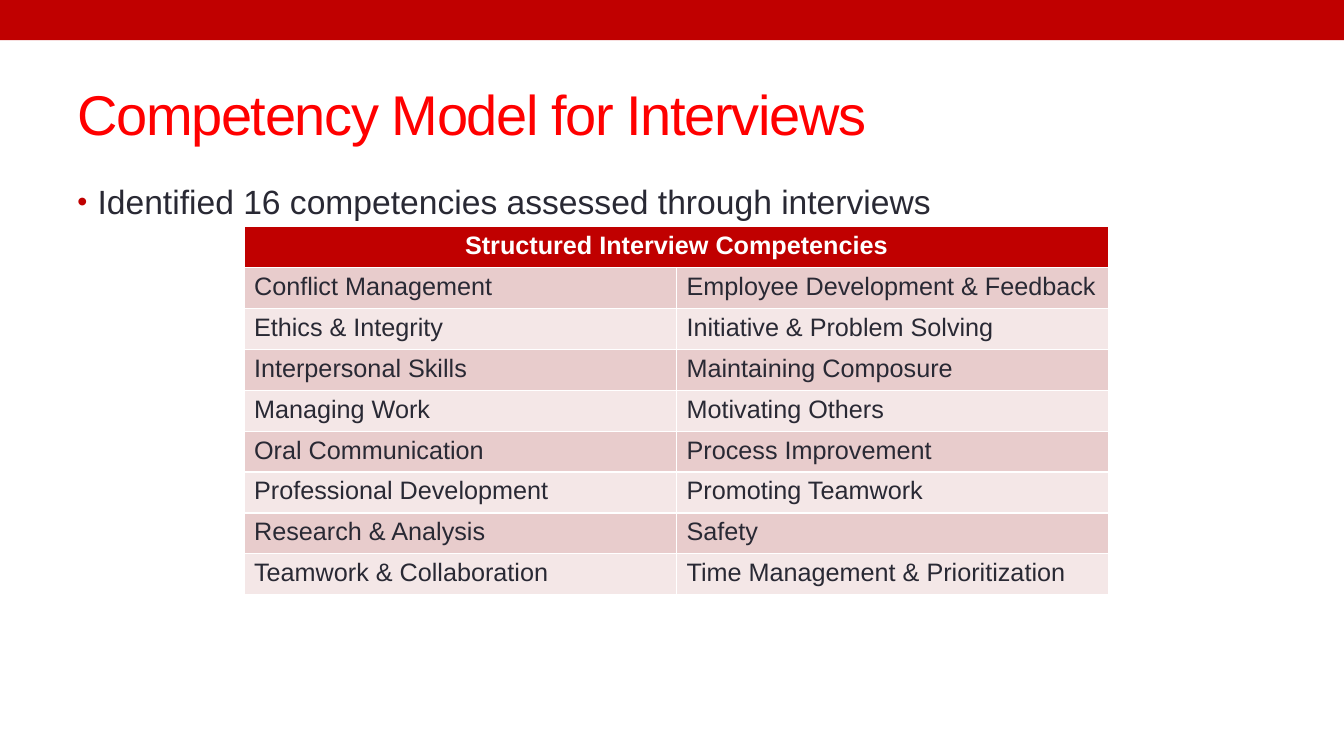
from lxml.etree import SubElement as Sub
from pptx import Presentation
from pptx.dml.color import RGBColor as RGB
from pptx.enum.shapes import MSO_SHAPE as Shape
from pptx.enum.text import MSO_ANCHOR as Anchor, PP_ALIGN as Align
from pptx.oxml.ns import qn
from pptx.util import Inches, Pt

colors = {
    "band": "C00000",
    "title": "FF0000",
    "text": "292934",
    "white": "FFFFFF",
    "dark": "E8CCCC",
    "light": "F4E7E7",
}
pairs = [
    ("Conflict Management", "Employee Development & Feedback"),
    ("Ethics & Integrity", "Initiative & Problem Solving"),
    ("Interpersonal Skills", "Maintaining Composure"),
    ("Managing Work", "Motivating Others"),
    ("Oral Communication", "Process Improvement"),
    ("Professional Development", "Promoting Teamwork"),
    ("Research & Analysis", "Safety"),
    ("Teamwork & Collaboration", "Time Management & Prioritization"),
]


def write(para, text, size, color, bold=False):
    run = para.add_run()
    run.text = text
    font = run.font
    font.name = "Arial"
    font.size = Pt(size)
    font.bold = bold
    font.color.rgb = RGB.from_string(colors[color])
    return run


def paint(item, color):
    item.fill.solid()
    item.fill.fore_color.rgb = RGB.from_string(colors[color])


deck = Presentation()
deck.slide_width = Inches(13.33)
deck.slide_height = Inches(7.5)
slide = deck.slides.add_slide(deck.slide_layouts[6])
shapes = slide.shapes

band = shapes.add_shape(Shape.RECTANGLE, 0, 0, deck.slide_width, Inches(0.4))
band.shadow.inherit = False
band.line.fill.background()
paint(band, "band")

title = shapes.add_textbox(Inches(0.67), Inches(0.58), Inches(12), Inches(1.08))
frame = title.text_frame
frame.word_wrap = True
frame.vertical_anchor = Anchor.MIDDLE
run = write(frame.paragraphs[0], "Competency Model for Interviews", 40, "title")
run.font._element.set("spc", "-100")

body = shapes.add_textbox(Inches(0.67), Inches(1.75), Inches(12), Inches(5.33))
frame = body.text_frame
frame.word_wrap = True
para = frame.paragraphs[0]
para.space_before = Pt(4.8)
write(para, "Identified 16 competencies assessed through interviews", 24, "text")
props = para._p.get_or_add_pPr()
props.set("marL", str(Inches(0.2)))
props.set("indent", str(Inches(-0.2)))
Sub(Sub(props, qn("a:buClr")), qn("a:srgbClr"), val=colors["band"])
Sub(props, qn("a:buSzPct"), val="85000")
Sub(props, qn("a:buFont"), typeface="Arial")
Sub(props, qn("a:buChar"), char="•")

grid = shapes.add_table(len(pairs) + 1, 2, Inches(2.42), Inches(2.25), Inches(8.58), Inches(3.65)).table
head = grid.cell(0, 0)
head.merge(grid.cell(0, 1))
paint(head, "band")
para = head.text_frame.paragraphs[0]
para.alignment = Align.CENTER
write(para, "Structured Interview Competencies", 18, "white", True)

for row, pair in enumerate(pairs, 1):
    for col, text in enumerate(pair):
        cell = grid.cell(row, col)
        paint(cell, "dark" if row % 2 else "light")
        write(cell.text_frame.paragraphs[0], text, 18, "text")

deck.save("out.pptx")
